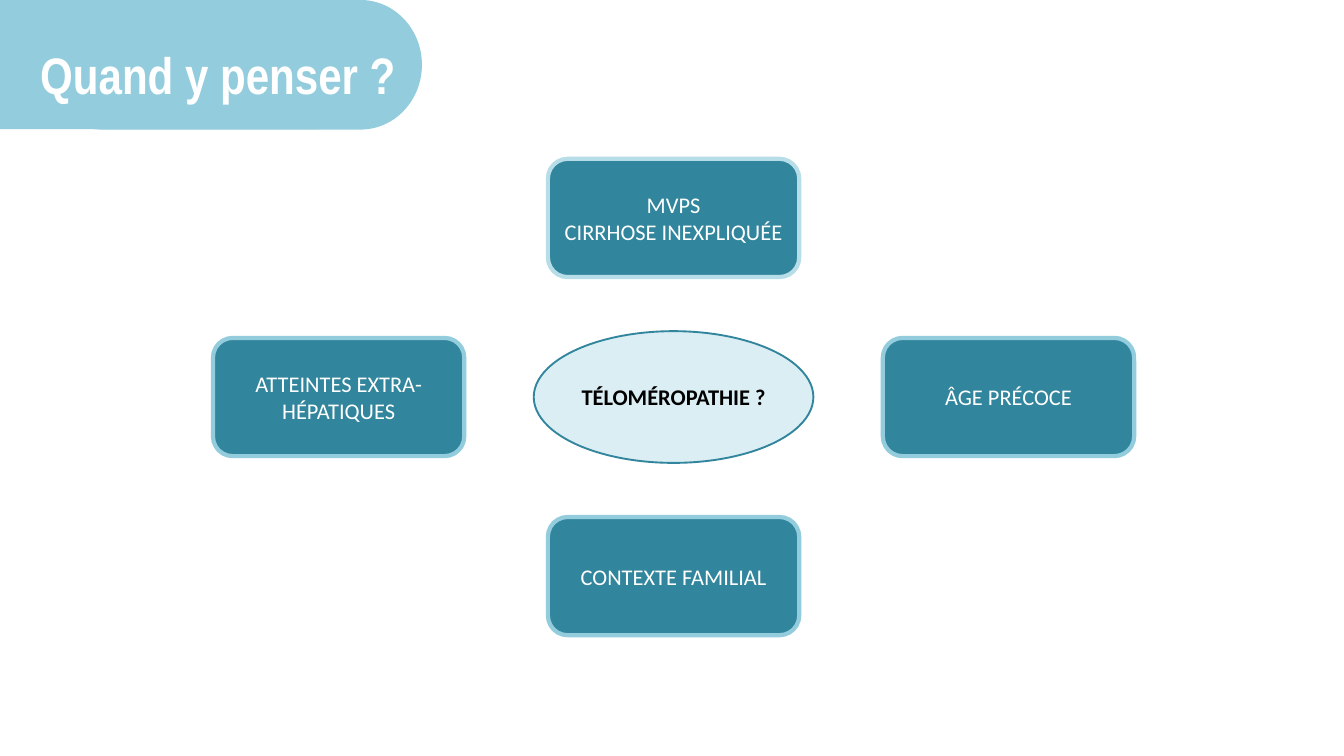
"""Build the slide on when to suspect a telomere disease."""
import pptx
import pptx.dml.color
import pptx.enum.shapes
import pptx.enum.text
import pptx.util

Cm = pptx.util.Cm
Pt = pptx.util.Pt
Kind = pptx.enum.shapes.MSO_SHAPE
Align = pptx.enum.text.PP_ALIGN
Anchor = pptx.enum.text.MSO_ANCHOR

THEME = {
    "teal": "31859C", "aqua": "93CDDD", "mist": "B7DEE8",
    "pale": "DBEEF4", "white": "FFFFFF", "black": "000000",
    "head": "Arial Narrow", "body": "Calibri",
    "head_size": 55, "body_size": 24, "head_lead": 76.9,
}

TITLE = "Quand y penser ?"
CORE = "TÉLOMÉROPATHIE ?"
SIGNS = [
    ("MVPS\nCIRRHOSE INEXPLIQUÉE", 0, -1, "mist"),
    ("ÂGE PRÉCOCE", 1, 0, "aqua"),
    ("ATTEINTES EXTRA-HÉPATIQUES", -1, 0, "aqua"),
    ("CONTEXTE FAMILIAL", 0, 1, "aqua"),
]
BANNER = [
    (Kind.RECTANGLE, (-0.03, 0, 11.96, 4.88)),
    (Kind.FLOWCHART_TERMINATOR, (1.52, 0, 14.43, 4.9)),
]
MID = (25.46, 15.01)
STEP = (12.66, 6.77)
SIGN_SIZE = (9.5, 4.47)
CORE_SIZE = (10.57, 4.98)


def tint(name):
    return pptx.dml.color.RGBColor.from_string(THEME[name])


def write(shape, text, font="body", size="body_size", color="white",
          bold=False, align=Align.CENTER, anchor=Anchor.MIDDLE, lead=None):
    frame = shape.text_frame
    frame.text = text
    frame.word_wrap = True
    frame.vertical_anchor = anchor
    for para in frame.paragraphs:
        para.alignment = align
        if lead:
            para.line_spacing = Pt(lead)
        for run in para.runs:
            run.font.name = THEME[font]
            run.font.size = Pt(THEME[size])
            run.font.bold = bold
            run.font.color.rgb = tint(color)


def draw(slide, kind, box, fill, line=None, width=0):
    shape = slide.shapes.add_shape(kind, *map(Cm, box))
    shape.shadow.inherit = False
    shape.fill.solid()
    shape.fill.fore_color.rgb = tint(fill)
    if line:
        shape.line.color.rgb = tint(line)
        shape.line.width = Pt(width)
    else:
        shape.line.fill.background()
    return shape


def place(size, col=0, row=0):
    return (MID[0] + col * STEP[0] - size[0] / 2,
            MID[1] + row * STEP[1] - size[1] / 2, *size)


def head(slide):
    for kind, box in BANNER:
        draw(slide, kind, box, "aqua")
    title = slide.shapes.title
    title.left, title.top, title.width, title.height = map(
        Cm, (1.52, 1.24, 26.21, 2.59))
    write(title, TITLE, font="head", size="head_size", bold=True,
          align=Align.LEFT, anchor=Anchor.TOP, lead=THEME["head_lead"])
    frame = title.text_frame
    frame.auto_size = pptx.enum.text.MSO_AUTO_SIZE.NONE
    frame.margin_left = frame.margin_right = 0
    frame.margin_top = frame.margin_bottom = 0
    title.element.getparent().append(title.element)


def main():
    deck = pptx.Presentation()
    deck.slide_width, deck.slide_height = Cm(50.8), Cm(28.58)
    slide = deck.slides.add_slide(deck.slide_layouts[5])
    head(slide)
    for text, col, row, line in SIGNS:
        box = place(SIGN_SIZE, col, row)
        sign = draw(slide, Kind.ROUNDED_RECTANGLE, box, "teal", line, 4.5)
        write(sign, text)
    core = draw(slide, Kind.OVAL, place(CORE_SIZE), "pale", "teal", 2)
    write(core, CORE, color="black", bold=True)
    deck.save("out.pptx")


if __name__ == "__main__":
    main()
